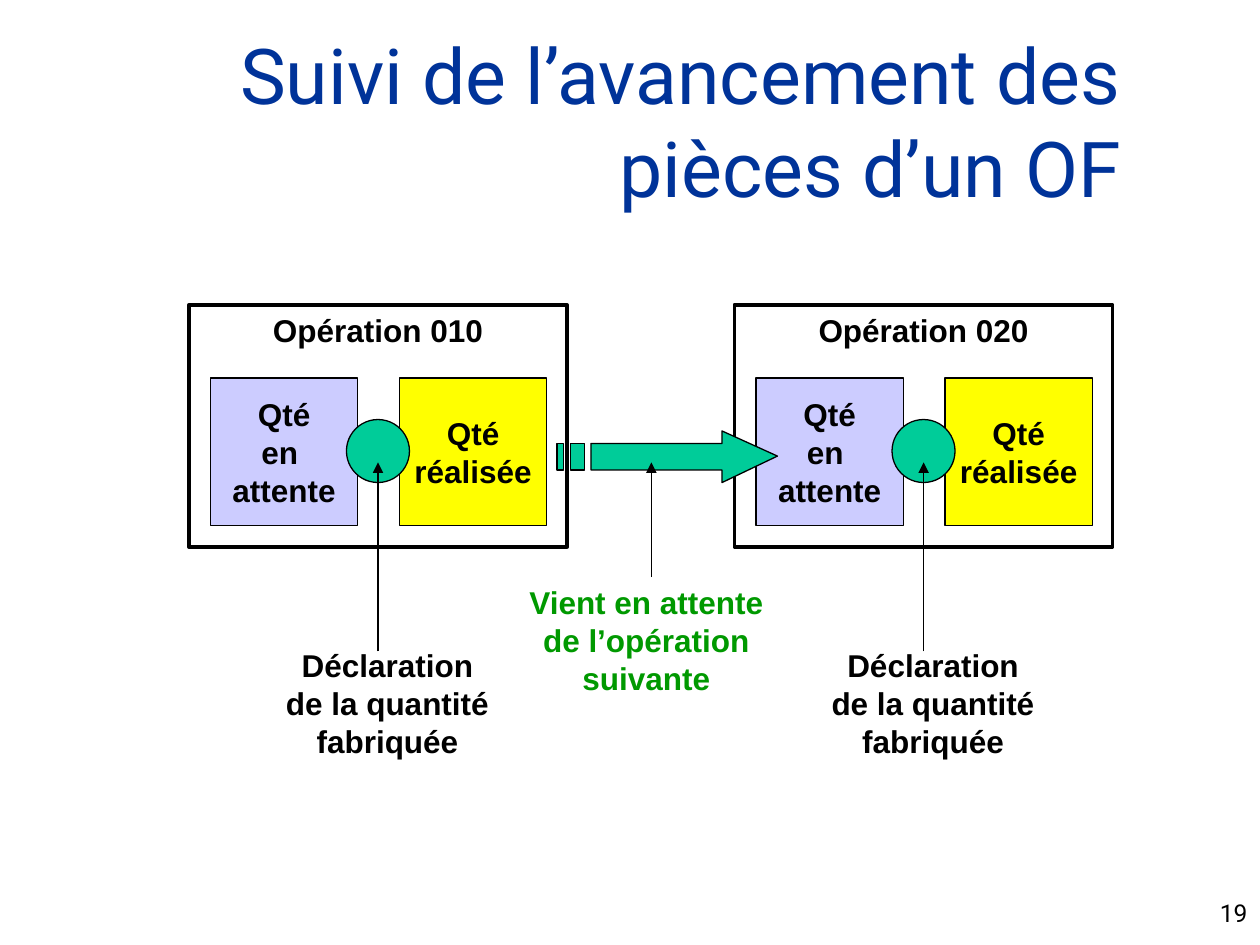
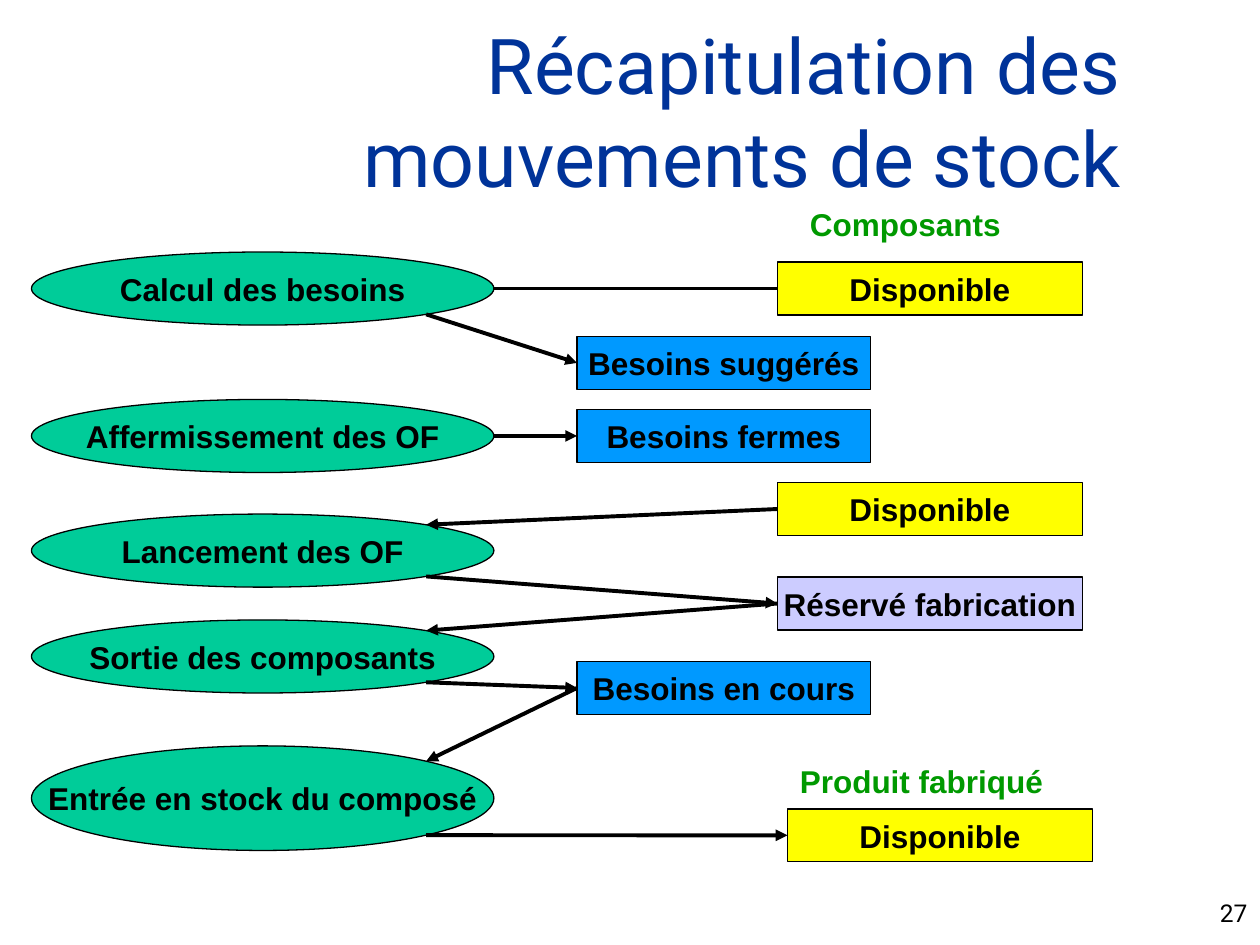
import math

import lxml.etree
import pptx
import pptx.dml.color
import pptx.enum.shapes
import pptx.enum.text
import pptx.oxml.ns
import pptx.util

Inches = pptx.util.Inches
ALIGN = pptx.enum.text.PP_ALIGN
ANCHOR = pptx.enum.text.MSO_ANCHOR
SHAPE = pptx.enum.shapes.MSO_SHAPE

BLACK, NAVY, CAPTION_GREEN = "000000", "003399", "009900"
GREEN, YELLOW, LILAC, BLUE = "00CC99", "FFFF00", "CCCCFF", "0099FF"


def color(hex_value):
    return pptx.dml.color.RGBColor.from_string(hex_value)


def write_text(frame, text, *, size=18, font="Arial", fill=BLACK, bold=True,
               align=ALIGN.CENTER, anchor=ANCHOR.TOP, wrap=False):
    """Write one paragraph for each line of text."""
    frame.word_wrap = wrap
    frame.auto_size = pptx.enum.text.MSO_AUTO_SIZE.NONE
    frame.vertical_anchor = anchor
    for index, line in enumerate(text.split("\n")):
        paragraph = frame.paragraphs[0] if index == 0 else frame.add_paragraph()
        paragraph.alignment = align
        run = paragraph.add_run()
        run.text = line
        run.font.size = pptx.util.Pt(size)
        run.font.name = font
        run.font.bold = bold
        run.font.color.rgb = color(fill)


class Deck:
    """Holds the shared style and the current slide."""

    heading = {"font": "Roboto", "bold": False, "align": ALIGN.RIGHT, "wrap": True}

    def __init__(self):
        self.presentation = pptx.Presentation()
        self.presentation.slide_width = Inches(10)
        self.presentation.slide_height = Inches(7.5)
        self.slide = None

    def add_slide(self, title, number, title_box):
        layout = self.presentation.slide_layouts[5]
        self.slide = self.presentation.slides.add_slide(layout)
        shape = self.slide.shapes.title
        shape.left, shape.top, shape.width, shape.height = map(Inches, title_box)
        write_text(shape.text_frame, title, size=44, fill=NAVY,
                   anchor=ANCHOR.MIDDLE, **self.heading)
        self.label(number, 7.92, 7.08, 2.08, 0.25, size=14, **self.heading)

    def label(self, text, left, top, width, height, **text_format):
        box = self.slide.shapes.add_textbox(*map(Inches, (left, top, width, height)))
        write_text(box.text_frame, text, **text_format)

    def style(self, shape, fill, weight=0.75):
        shape.shadow.inherit = False
        if fill:
            shape.fill.solid()
            shape.fill.fore_color.rgb = color(fill)
        else:
            shape.fill.background()
        shape.line.color.rgb = color(BLACK)
        shape.line.width = pptx.util.Pt(weight)

    def block(self, kind, text, left, top, width, height, fill=None, weight=0.75,
              anchor=ANCHOR.MIDDLE):
        shape = self.slide.shapes.add_shape(
            kind, *map(Inches, (left, top, width, height)))
        self.style(shape, fill, weight)
        if text:
            write_text(shape.text_frame, text, anchor=anchor)
        return shape

    def outline(self, contours, fill):
        """Draw closed contours, given in inches, as one freeform."""
        points = [[(Inches(x), Inches(y)) for x, y in contour] for contour in contours]
        builder = self.slide.shapes.build_freeform(*points[0][0])
        builder.add_line_segments(points[0][1:], close=True)
        for contour in points[1:]:
            builder.move_to(*contour[0])
            builder.add_line_segments(contour[1:], close=True)
        self.style(builder.convert_to_shape(), fill)

    def link(self, begin, end, weight=2.25, arrow=True):
        """Join two ends: a point, or a rectangle met at its left side."""
        begin_point, end_point = (
            item if isinstance(item, tuple) else (item.left, item.top + item.height // 2)
            for item in (begin, end))
        connector = self.slide.shapes.add_connector(
            pptx.enum.shapes.MSO_CONNECTOR.STRAIGHT, *begin_point, *end_point)
        if not isinstance(begin, tuple):
            connector.begin_connect(begin, 1)
        if not isinstance(end, tuple):
            connector.end_connect(end, 1)
        connector.line.color.rgb = color(BLACK)
        connector.line.width = pptx.util.Pt(weight)
        qn = pptx.oxml.ns.qn
        if arrow:
            line = connector.line._get_or_add_ln()
            lxml.etree.SubElement(line, qn("a:tailEnd"), type="triangle")
        lxml.etree.SubElement(connector._element.spPr, qn("a:effectLst"))


def rim_point(ellipse, degrees):
    """Point on an ellipse; angles run clockwise from its right end."""
    angle = math.radians(degrees)
    return (round(ellipse.left + ellipse.width / 2 * (1 + math.cos(angle))),
            round(ellipse.top + ellipse.height / 2 * (1 + math.sin(angle))))


def build_progress_slide(deck):
    deck.add_slide("Suivi de l’avancement des pièces d’un OF", "19", (0, 0.33, 9, 1.25))
    operations = {"Opération 010": 1.5, "Opération 020": 5.83}

    # Operations with their two quantities
    for name, left in operations.items():
        deck.block(SHAPE.RECTANGLE, "Qté\nen \nattente", left + 0.17, 3, 1.17, 1.17, LILAC)
        deck.block(SHAPE.RECTANGLE, "Qté\nréalisée", left + 1.67, 3, 1.17, 1.17, YELLOW)
        deck.block(SHAPE.RECTANGLE, name, left, 2.42, 3, 1.92, weight=2.25,
                   anchor=ANCHOR.TOP)

    # Striped arrow to the next operation
    top, bottom = 3.52, 3.73
    arrow = [(5.73, 3.42), (5.73, top), (4.69, top), (4.69, bottom),
             (5.73, bottom), (5.73, 3.83), (6.17, 3.62)]
    stripes = [[(left, top), (left, bottom), (right, bottom), (right, top)]
               for left, right in ((4.53, 4.64), (4.42, 4.47))]
    deck.outline([arrow, *stripes], GREEN)

    # Declarations
    for left in operations.values():
        deck.block(SHAPE.OVAL, "", left + 1.25, 3.33, 0.5, 0.5, GREEN)
        x = Inches(left + 1.5)
        deck.link((x, Inches(5.17)), (x, Inches(3.67)), weight=0.75)
        deck.label("Déclaration\nde la quantité\nfabriquée", left + 0.67, 5.08, 1.81, 1)

    # Transfer caption
    x = Inches(5.17)
    deck.link((x, Inches(4.58)), (x, Inches(3.67)), weight=0.75)
    deck.label("Vient en attente\nde l’opération\nsuivante", 4.1, 4.58, 2.06, 1,
               fill=CAPTION_GREEN)


def build_stock_slide(deck):
    deck.add_slide("Récapitulation des mouvements de stock", "27", (0.17, 0.25, 8.83, 1.25))

    # Stock headings
    for text, left, top, width in (("Composants", 6.33, 1.58, 1.72),
                                   ("Produit fabriqué", 6.25, 6, 2.13)):
        deck.label(text, left, top, width, 0.4, fill=CAPTION_GREEN, align=ALIGN.LEFT)

    # Process steps
    steps = (("Calcul des besoins", 2, 0.58), ("Affermissement des OF", 3.17, 0.58),
             ("Lancement des OF", 4.08, 0.58), ("Sortie des composants", 4.92, 0.58),
             ("Entrée en stock du composé", 5.92, 0.83))
    planning, firming, launch, issue, receipt = (
        deck.block(SHAPE.OVAL, text, 0.25, top, 3.67, height, GREEN)
        for text, top, height in steps)

    # Stock states
    states = (("Disponible", 6.17, 2.08, 2.42, YELLOW),
              ("Besoins suggérés", 4.58, 2.67, 2.33, BLUE),
              ("Besoins fermes", 4.58, 3.25, 2.33, BLUE),
              ("Disponible", 6.17, 3.83, 2.42, YELLOW),
              ("Réservé fabrication", 6.17, 4.58, 2.42, LILAC),
              ("Besoins en cours", 4.58, 5.25, 2.33, BLUE),
              ("Disponible", 6.25, 6.42, 2.42, YELLOW))
    available, suggested, firm, to_reserve, reserved, current, finished = (
        deck.block(SHAPE.RECTANGLE, text, left, top, width, 0.42, fill)
        for text, left, top, width, fill in states)

    # Movements
    right, lower_right, upper_right = 0, 45, -45
    deck.link(available, rim_point(planning, right), arrow=False)
    for step, side, state in ((planning, lower_right, suggested), (firming, right, firm),
                              (launch, lower_right, reserved),
                              (issue, lower_right, current),
                              (receipt, lower_right, finished)):
        deck.link(rim_point(step, side), state)
    for state, step in ((to_reserve, launch), (reserved, issue), (current, receipt)):
        deck.link(state, rim_point(step, upper_right))


def main():
    deck = Deck()
    build_progress_slide(deck)
    build_stock_slide(deck)
    deck.presentation.save("out.pptx")


if __name__ == "__main__":
    main()
